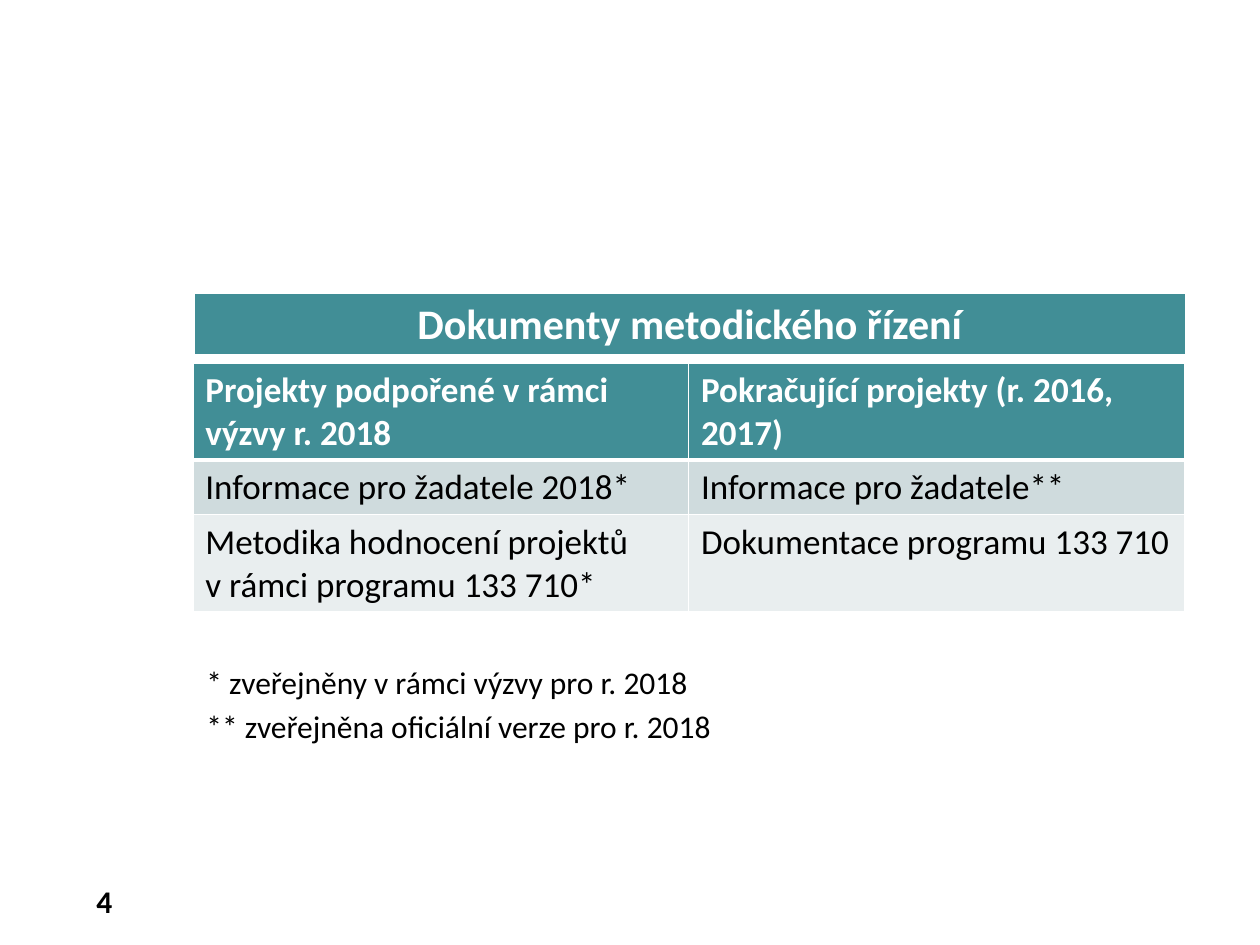
from lxml import etree
from pptx import Presentation
from pptx.dml.color import RGBColor
from pptx.enum.text import PP_ALIGN
from pptx.oxml.ns import qn
from pptx.util import Inches, Pt

LEFT, RIGHT, CENTER = PP_ALIGN.LEFT, PP_ALIGN.RIGHT, PP_ALIGN.CENTER
TEAL, PALE, PALEST = "418E96", "CFDBDD", "E9EEEF"
WHITE, BLACK = "FFFFFF", "000000"


def write(frame, text, size, color, bold=False, align=LEFT):
    frame.word_wrap = True
    frame.text = text
    paragraph = frame.paragraphs[0]
    paragraph.alignment = align
    for run in paragraph.runs:
        run.font.name = "Calibri"
        run.font.size = Pt(size)
        run.font.bold = bold
        run.font.color.rgb = RGBColor.from_string(color)


def style_cell(cell, fill, top, bottom):
    """White borders, widths in points, then the fill."""
    properties = cell._tc.get_or_add_tcPr()
    for side, width in (("L", 1), ("R", 1), ("T", top), ("B", bottom)):
        line = etree.SubElement(properties, qn(f"a:ln{side}"), w=str(Pt(width)))
        solid = etree.SubElement(line, qn("a:solidFill"))
        etree.SubElement(solid, qn("a:srgbClr"), val=WHITE)
    cell.fill.solid()
    cell.fill.fore_color.rgb = RGBColor.from_string(fill)


prs = Presentation()
prs.slide_width, prs.slide_height = Inches(10), Inches(7.5)
slide = prs.slides.add_slide(prs.slide_layouts[6])

# Page number
page_number = slide.shapes.add_textbox(Inches(0.28), Inches(6.95), Inches(0.71), Inches(0.4))
write(page_number.text_frame, "4", 18, BLACK, True, RIGHT)

# Tables: left, top, alignment, size, rows of (height, fill, text colour, texts)
tables = [
    (1.53, 2.88, LEFT, 20, [
        (0.77, TEAL, WHITE, ["Projekty podpořené v rámci výzvy r. 2018",
                             "Pokračující projekty (r. 2016, 2017)"]),
        (0.43, PALE, BLACK, ["Informace pro žadatele 2018*",
                             "Informace pro žadatele**"]),
        (0.77, PALEST, BLACK, ["Metodika hodnocení projektů\vv rámci programu 133 710*",
                               "Dokumentace programu 133 710"]),
    ]),
    (1.54, 2.33, CENTER, 24, [
        (0.48, TEAL, WHITE, ["Dokumenty metodického řízení"]),
    ]),
]
table_width = 7.87
for left, top, align, size, rows in tables:
    column_count = len(rows[0][3])
    height = sum(row[0] for row in rows)
    table = slide.shapes.add_table(len(rows), column_count, Inches(left), Inches(top),
                                   Inches(table_width), Inches(height)).table
    for column in table.columns:
        column.width = Inches(table_width / column_count)
    for r, (row_height, fill, color, texts) in enumerate(rows):
        table.rows[r].height = Inches(row_height)
        for c, text in enumerate(texts):
            cell = table.cell(r, c)
            style_cell(cell, fill, 3 if r == 1 else 1, 3 if r == 0 else 1)
            write(cell.text_frame, text, size, color, fill == TEAL, align)

# Footnotes
footnotes = ["* zveřejněny v rámci výzvy pro r. 2018",
             "** zveřejněna oficiální verze pro r. 2018"]
for i, footnote in enumerate(footnotes):
    note = slide.shapes.add_textbox(Inches(1.54), Inches(5.21 + 0.35 * i),
                                    Inches(7.8), Inches(0.71))
    write(note.text_frame, footnote, 18, BLACK)

prs.save("out.pptx")
